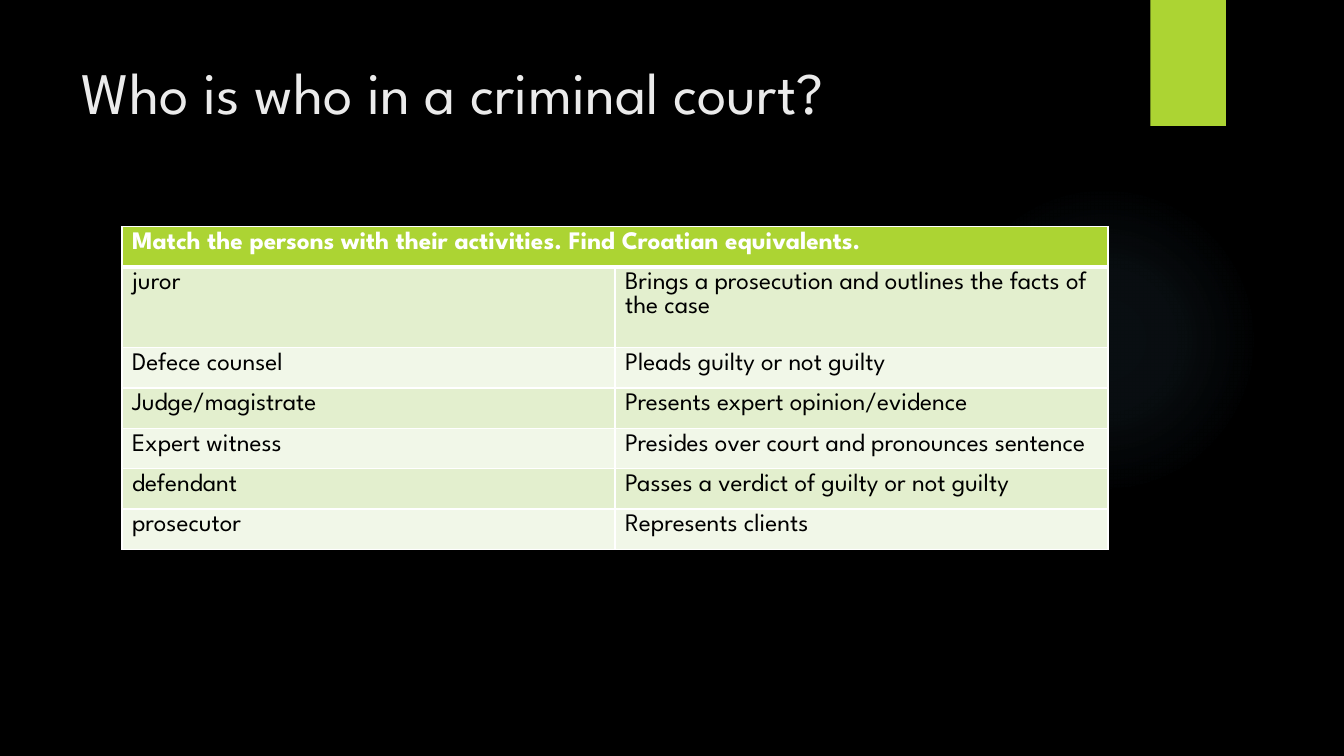
"""Build the slide on who is who in a criminal court."""
from dataclasses import dataclass

from lxml import etree
from pptx import Presentation
from pptx.dml.color import RGBColor
from pptx.enum import shapes, text
from pptx.oxml import ns
from pptx.util import Inches, Pt


@dataclass(frozen=True)
class Theme:
    """Colours, font and type sizes of the slide."""
    font: str = "League Spartan"
    background: str = "000000"
    title: str = "EBEBEB"
    accent: str = "ACD433"
    glow: str = "7AC4F0"
    border: str = "FFFFFF"
    header_text: str = "FFFFFF"
    body_text: str = "000000"
    bands: tuple = ("E3EFCE", "F1F7E8")
    title_size: int = 42
    table_size: int = 18


THEME = Theme()
HEADING = "Match the persons with their activities. Find Croatian equivalents."
PAIRS = (
    ("juror", "Brings a prosecution and outlines the facts of the case"),
    ("Defece counsel", "Pleads guilty or not guilty"),
    ("Judge/magistrate", "Presents expert opinion/evidence"),
    ("Expert witness", "Presides over court and pronounces sentence"),
    ("defendant", "Passes a verdict of guilty or not guilty"),
    ("prosecutor", "Represents clients"),
)
GLOW_STOPS = ((0, 7), (36, 6), (69, 0))


def add_node(parent, tag, **attributes):
    """Append a drawing element and return it."""
    values = {key: str(value) for key, value in attributes.items()}
    return etree.SubElement(parent, ns.qn(f"a:{tag}"), values)


def style_font(font, size, color, bold=False):
    """Apply the theme font with a size and colour."""
    font.name, font.size, font.bold = THEME.font, Pt(size), bold
    font.color.rgb = RGBColor.from_string(color)


def add_plain_shape(page, kind, left, top, width, height):
    """Add a shape without outline or shadow."""
    shape = page.shapes.add_shape(
        kind, Inches(left), Inches(top), Inches(width), Inches(height))
    shape.line.fill.background()
    shape.shadow.inherit = False
    return shape


def add_glow(page):
    """Add the faint round glow behind the table."""
    glow = add_plain_shape(page, shapes.MSO_SHAPE.OVAL, 9.41, 1.83, 3.08, 3.08)
    properties = glow.element.spPr
    gradient = add_node(properties, "gradFill", rotWithShape=1)
    stops = add_node(gradient, "gsLst")
    for position, opacity in GLOW_STOPS:
        stop = add_node(stops, "gs", pos=position * 1000)
        color = add_node(stop, "srgbClr", val=THEME.glow)
        add_node(color, "alpha", val=opacity * 1000)
    circle = add_node(gradient, "path", path="circle")
    add_node(circle, "fillToRect", l=50000, t=50000, r=50000, b=50000)
    properties.find(ns.qn("a:prstGeom")).addnext(gradient)


def add_tab(page):
    """Add the green tab at the top edge."""
    tab = add_plain_shape(page, shapes.MSO_SHAPE.RECTANGLE, 11.41, 0, 0.75, 1.25)
    tab.fill.solid()
    tab.fill.fore_color.rgb = RGBColor.from_string(THEME.accent)


def set_title(page, wording):
    """Place and format the title placeholder."""
    title = page.shapes.title
    title.left, title.top = Inches(0.71), Inches(0.5)
    title.width, title.height = Inches(10.29), Inches(1.53)
    frame = title.text_frame
    frame.text = wording
    frame.word_wrap = True
    frame.vertical_anchor = text.MSO_ANCHOR.TOP
    para = frame.paragraphs[0]
    para.alignment = text.PP_ALIGN.LEFT
    style_font(para.font, THEME.title_size, THEME.title)


def set_borders(cell, top=1, bottom=1):
    """Draw the four cell borders at the given point widths."""
    properties = cell._tc.get_or_add_tcPr()
    widths = {"lnL": 1, "lnR": 1, "lnT": top, "lnB": bottom}
    for index, (side, width) in enumerate(widths.items()):
        line = add_node(properties, side, w=Pt(width))
        add_node(add_node(line, "solidFill"), "srgbClr", val=THEME.border)
        properties.insert(index, line)


def fill_cell(cell, wording, fill, color, bold=False):
    """Write and colour one table cell."""
    cell.text = wording
    cell.fill.solid()
    cell.fill.fore_color.rgb = RGBColor.from_string(fill)
    style_font(cell.text_frame.paragraphs[0].font, THEME.table_size, color, bold)


def add_matching_table(page):
    """Add the table of persons and activities."""
    row_count = len(PAIRS) + 1
    table = page.shapes.add_table(
        row_count, 2, Inches(1.21), Inches(2.25), Inches(9.78), Inches(0.4 * row_count)).table
    table.rows[1].height = Inches(0.8)
    header = table.cell(0, 0)
    header.merge(table.cell(0, 1))
    fill_cell(header, HEADING, THEME.accent, THEME.header_text, bold=True)
    for cell in table.rows[0].cells:
        set_borders(cell, bottom=3)
    for row, pair in enumerate(PAIRS, start=1):
        for column, wording in enumerate(pair):
            cell = table.cell(row, column)
            fill_cell(cell, wording, THEME.bands[(row - 1) % 2], THEME.body_text)
            set_borders(cell, top=3 if row == 1 else 1)


def main():
    """Build and save the deck."""
    deck = Presentation()
    deck.slide_width, deck.slide_height = Inches(13.33), Inches(7.5)
    page = deck.slides.add_slide(deck.slide_layouts.get_by_name("Title Only"))
    page.background.fill.solid()
    page.background.fill.fore_color.rgb = RGBColor.from_string(THEME.background)
    add_glow(page)
    add_tab(page)
    set_title(page, "Who is who in a criminal court?")
    add_matching_table(page)
    deck.save("out.pptx")


if __name__ == "__main__":
    main()
